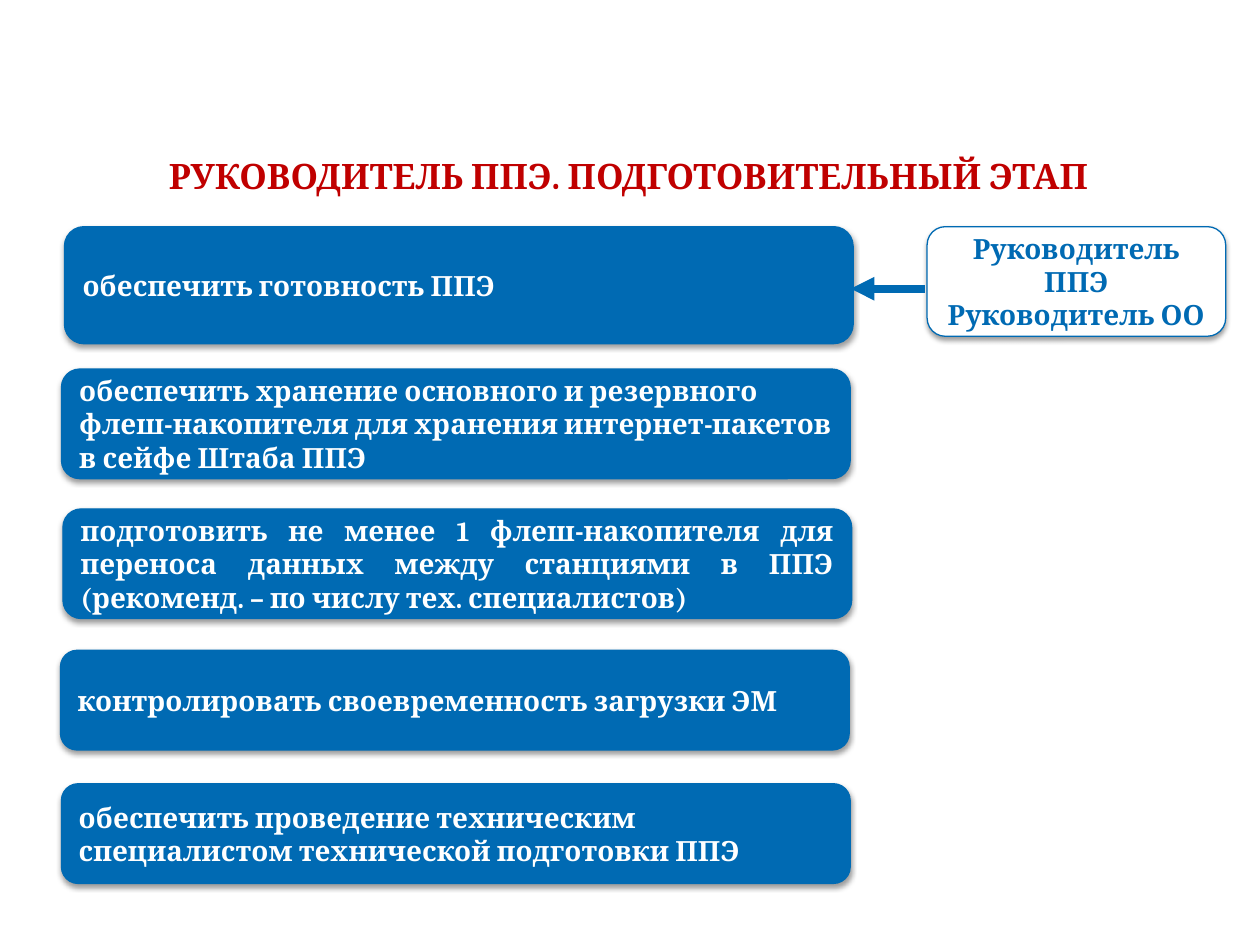
from lxml import etree
from pptx import Presentation
from pptx.dml.color import RGBColor
from pptx.enum.shapes import MSO_CONNECTOR, MSO_SHAPE
from pptx.enum.text import MSO_ANCHOR, PP_ALIGN
from pptx.oxml.ns import qn
from pptx.util import Cm, Pt

LEFT, CENTER, JUSTIFY = PP_ALIGN.LEFT, PP_ALIGN.CENTER, PP_ALIGN.JUSTIFY
MIDDLE = MSO_ANCHOR.MIDDLE
ROUNDED = MSO_SHAPE.ROUNDED_RECTANGLE
STRAIGHT = MSO_CONNECTOR.STRAIGHT

BLUE = RGBColor(0x00, 0x6A, 0xB3)
RED = RGBColor(0xC0, 0x00, 0x00)
WHITE = RGBColor(0xFF, 0xFF, 0xFF)

FONT = "Cambria"
TASK_WIDTH = 15.9

# left, top, height in cm, alignment, text
TASKS = [
    (1.3, 4.57, 2.36, LEFT, "обеспечить готовность ППЭ"),
    (1.24, 7.44, 2.21, LEFT,
     "обеспечить хранение основного и резервного флеш-накопителя "
     "для хранения интернет-пакетов в сейфе Штаба ППЭ"),
    (1.27, 10.26, 2.21, JUSTIFY,
     "подготовить не менее 1 флеш-накопителя для переноса данных между "
     "станциями в ППЭ (рекоменд. – по числу тех. специалистов)"),
    (1.22, 13.11, 2.01, LEFT, "контролировать своевременность загрузки ЭМ"),
    (1.24, 15.8, 2.01, LEFT,
     "обеспечить проведение техническим специалистом "
     "технической подготовки ППЭ"),
]


def set_text(sp, text, size=15.9, color=WHITE, align=LEFT):
    """Write one paragraph per line of text, in bold and centred vertically."""
    tf = sp.text_frame
    tf.word_wrap = True
    tf.vertical_anchor = MIDDLE
    tf.text = text
    for p in tf.paragraphs:
        p.alignment = align
        for r in p.runs:
            r.font.name = FONT
            r.font.size = Pt(size)
            r.font.bold = True
            r.font.color.rgb = color


def add_soft_shadow(sp):
    sp.shadow.inherit = False
    effects = sp._element.spPr.find(qn("a:effectLst"))
    shadow = etree.SubElement(
        effects, qn("a:outerShdw"), blurRad=str(Pt(3.1)), dist=str(Pt(1.6)),
        dir="5400000", rotWithShape="0")
    color = etree.SubElement(shadow, qn("a:srgbClr"), val="000000")
    etree.SubElement(color, qn("a:alpha"), val="38000")


def add_title(s, text):
    sp = s.shapes.add_textbox(Cm(1.24), Cm(2.69), Cm(22.86), Cm(1.68))
    set_text(sp, text, size=20, color=RED, align=CENTER)


def add_card(s, left, top, width, height, text, fill=BLUE, **text_format):
    sp = s.shapes.add_shape(ROUNDED, Cm(left), Cm(top), Cm(width), Cm(height))
    sp.fill.solid()
    sp.fill.fore_color.rgb = fill
    sp.line.color.rgb = BLUE
    sp.line.width = Pt(0.75)
    add_soft_shadow(sp)
    set_text(sp, text, **text_format)


def add_arrow(s, x1, x2, y):
    line = s.shapes.add_connector(STRAIGHT, Cm(x1), Cm(y), Cm(x2), Cm(y))
    line.line.color.rgb = BLUE
    line.line.width = Pt(4.5)
    etree.SubElement(line.line._get_or_add_ln(), qn("a:tailEnd"),
                     type="triangle")
    etree.SubElement(line._element.spPr, qn("a:effectLst"))


def main():
    prs = Presentation()
    prs.slide_width, prs.slide_height = Cm(25.4), Cm(19.05)
    s = prs.slides.add_slide(prs.slide_layouts[6])

    add_title(s, "РУКОВОДИТЕЛЬ ППЭ. ПОДГОТОВИТЕЛЬНЫЙ ЭТАП")
    for left, top, height, align, text in TASKS:
        add_card(s, left, top, TASK_WIDTH, height, text, align=align)
    add_card(s, 18.69, 4.57, 6.02, 2.21, "Руководитель ППЭ\nРуководитель ОО",
             fill=WHITE, color=BLUE, align=CENTER)
    add_arrow(s, 18.64, 17.15, 5.82)

    prs.save("out.pptx")


if __name__ == "__main__":
    main()
